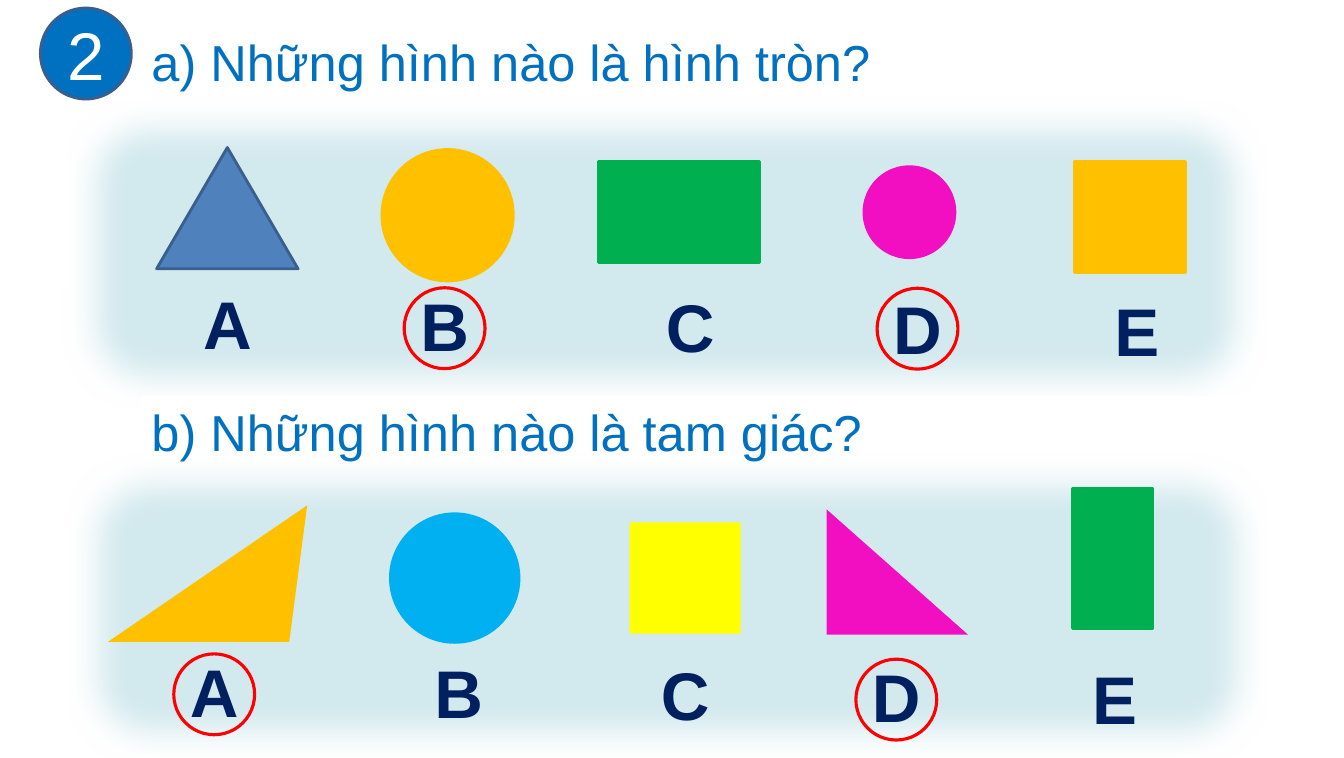
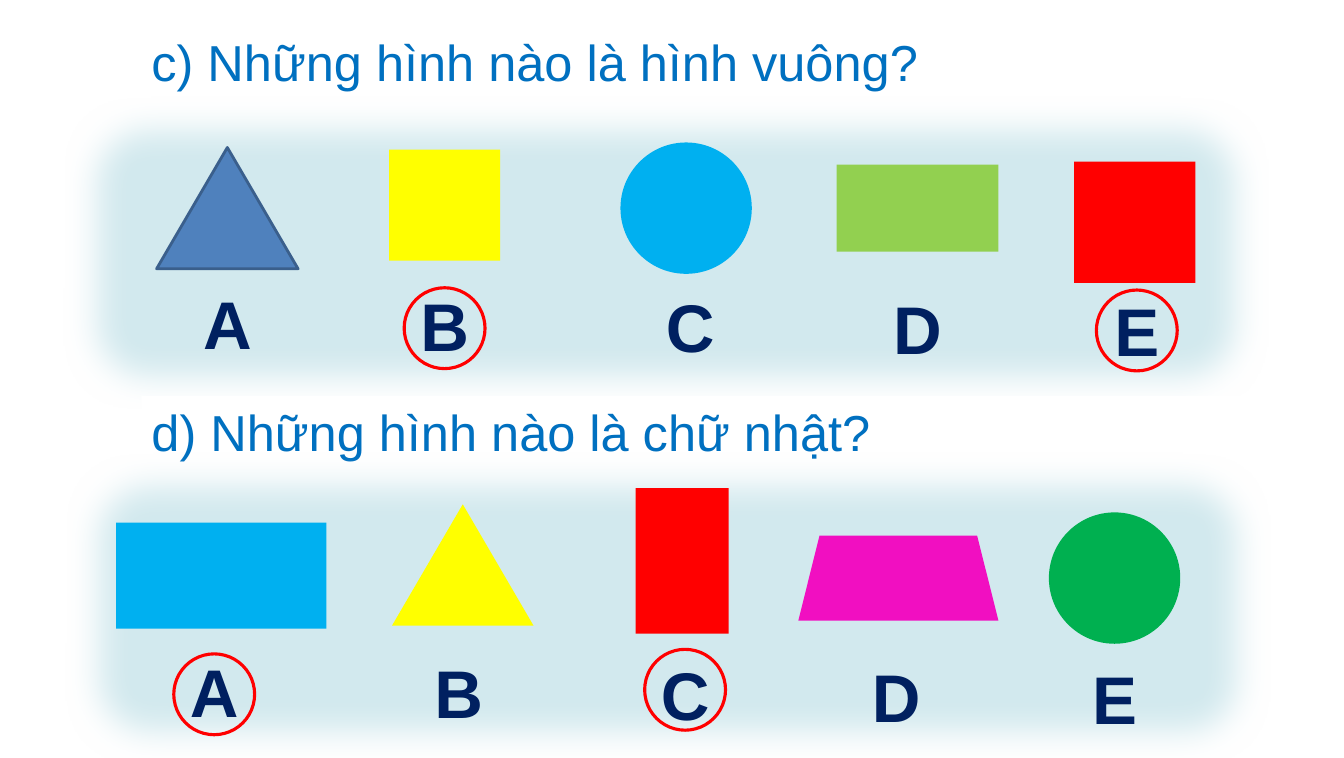
import pptx
import pptx.util
import pptx.dml.color
import pptx.enum.shapes
import pptx.enum.text
import lxml.etree

KIND = pptx.enum.shapes.MSO_SHAPE
SIDE = pptx.enum.text.PP_ALIGN
HOLD = pptx.enum.text.MSO_ANCHOR
BLUE, NAVY, PALE, RED = "0070C0", "002060", "D2E9EE", "FF0000"
GOLD, GREEN, PINK, SKY, YELLOW = "FFC000", "00B050", "F10FC1", "00B0F0", "FFFF00"
STEEL, DARK, LIME, WHITE = "4F81BD", "3A5F8C", "92D050", "FFFFFF"
FORMS = {
    "round": KIND.OVAL, "rect": KIND.RECTANGLE, "tri": KIND.ISOSCELES_TRIANGLE,
    "trap": KIND.TRAPEZOID, "panel": KIND.ROUNDED_RECTANGLE,
    "slant": [(0, 1), (1, 0), (0.91, 1)],
    "right": [(0, 1), (0, 0), (1, 1)],
}
ROWS = [
    {"title": 0.26, "panel": (0.63, 0.96), "label": 2.74,
     "cols": (1.7, 3.85, 6.28, 8.53, 10.7)},
    {"title": 3.92, "panel": (0.65, 4.48), "label": 6.38,
     "cols": (1.57, 3.99, 6.23, 8.32, 10.48)},
]
STEP = 0.0175
PEAK = ("tri", 1.55, 1.46, 1.4, 1.2, STEEL, DARK)
SLIDES = [
    [
        ("a) Những hình nào là hình tròn?", {"B": 0.09, "D": 0.06}, [
            PEAK,
            ("round", 3.78, 1.48, 1.3, 1.3, GOLD, GOLD),
            ("rect", 5.92, 1.6, 1.6, 1, GREEN, GREEN),
            ("round", 8.55, 1.65, 0.9, 0.9, PINK, PINK),
            ("rect", 10.63, 1.6, 1.1, 1.1, GOLD, GOLD)]),
        ("b) Những hình nào là tam giác?", {"A": 0.09, "D": 0.09}, [
            ("slant", 1.07, 5, 1.97, 1.35, GOLD),
            ("round", 3.85, 5.07, 1.3, 1.3, SKY),
            ("rect", 6.23, 5.17, 1.1, 1.1, YELLOW),
            ("right", 8.18, 5.04, 1.4, 1.24, PINK),
            ("rect", 10.61, 4.83, 0.8, 1.39, GREEN, GREEN)]),
    ],
    [
        ("c) Những hình nào là hình vuông?", {"B": 0.09, "E": 0.06}, [
            PEAK,
            ("rect", 3.85, 1.48, 1.1, 1.1, YELLOW),
            ("round", 6.14, 1.41, 1.3, 1.3, SKY),
            ("rect", 8.28, 1.63, 1.6, 0.86, LIME),
            ("rect", 10.63, 1.6, 1.2, 1.2, RED)]),
        ("d) Những hình nào là chữ nhật?", {"A": 0.09, "C": 0.01}, [
            ("rect", 1.15, 5.17, 2.08, 1.05, SKY),
            ("tri", 3.88, 4.99, 1.4, 1.2, YELLOW),
            ("rect", 6.29, 4.83, 0.92, 1.44, RED),
            ("trap", 7.9, 5.3, 1.98, 0.84, PINK),
            ("round", 10.38, 5.07, 1.3, 1.3, GREEN)]),
    ],
]


def inch(num):
    return pptx.util.Inches(num)


def hue(code):
    return pptx.dml.color.RGBColor.from_string(code)


def draw(page, kind, x, y, w, h, fill=None, line=None, thick=2):
    form = FORMS[kind]
    if isinstance(form, list):
        spots = [(inch(x + w * a), inch(y + h * b)) for a, b in form]
        pen = page.shapes.build_freeform(*spots[0])
        pen.add_line_segments(spots[1:], close=True)
        shape = pen.convert_to_shape()
    else:
        shape = page.shapes.add_shape(form, inch(x), inch(y), inch(w), inch(h))
    shape.shadow.inherit = False
    if fill:
        shape.fill.solid()
        shape.fill.fore_color.rgb = hue(fill)
    else:
        shape.fill.background()
    if line:
        shape.line.color.rgb = hue(line)
        shape.line.width = pptx.util.Pt(thick)
    else:
        shape.line.fill.background()
    return shape


def write(shape, text, size, tone, side=SIDE.CENTER, bold=False, hold=HOLD.TOP):
    frame = shape.text_frame
    frame.word_wrap = True
    frame.vertical_anchor = hold
    para = frame.paragraphs[0]
    para.text = text
    para.alignment = side
    font = para.runs[0].font
    font.name, font.size, font.bold = "Arial", pptx.util.Pt(size), bold
    font.color.rgb = hue(tone)


def soften(shape, size):
    root = shape.element.spPr.find(pptx.oxml.ns.qn("a:effectLst"))
    edge = lxml.etree.SubElement(root, pptx.oxml.ns.qn("a:softEdge"))
    edge.set("rad", str(pptx.util.Pt(size)))


def block(page, row, title, rings, items):
    head = draw(page, "rect", 1.4, row["title"], 11.08, 0.71, WHITE)
    write(head, title, 36, BLUE, SIDE.JUSTIFY)
    soften(draw(page, "panel", *row["panel"], 11.92, 3.1, PALE), 25)
    for item in items:
        draw(page, *item)
    for i, (mark, x) in enumerate(zip("ABCDE", row["cols"])):
        y = row["label"] + i * STEP
        box = page.shapes.add_textbox(inch(x), inch(y), inch(1.1), inch(0.91))
        write(box, mark, 48, NAVY, bold=True)
        if mark in rings:
            draw(page, "round", x + 0.15, y + rings[mark], 0.8, 0.8, None, RED, 2.25)


def main():
    deck = pptx.Presentation()
    deck.slide_width, deck.slide_height = inch(13.3), inch(7.5)
    for i, parts in enumerate(SLIDES):
        page = deck.slides.add_slide(deck.slide_layouts[6])
        for row, part in zip(ROWS, parts):
            block(page, row, *part)
        if i == 0:
            badge = draw(page, "round", 0.4, 0.08, 0.9, 0.9, BLUE, DARK)
            write(badge, "2", 48, WHITE, hold=HOLD.MIDDLE)
    deck.save("out.pptx")


if __name__ == "__main__":
    main()
